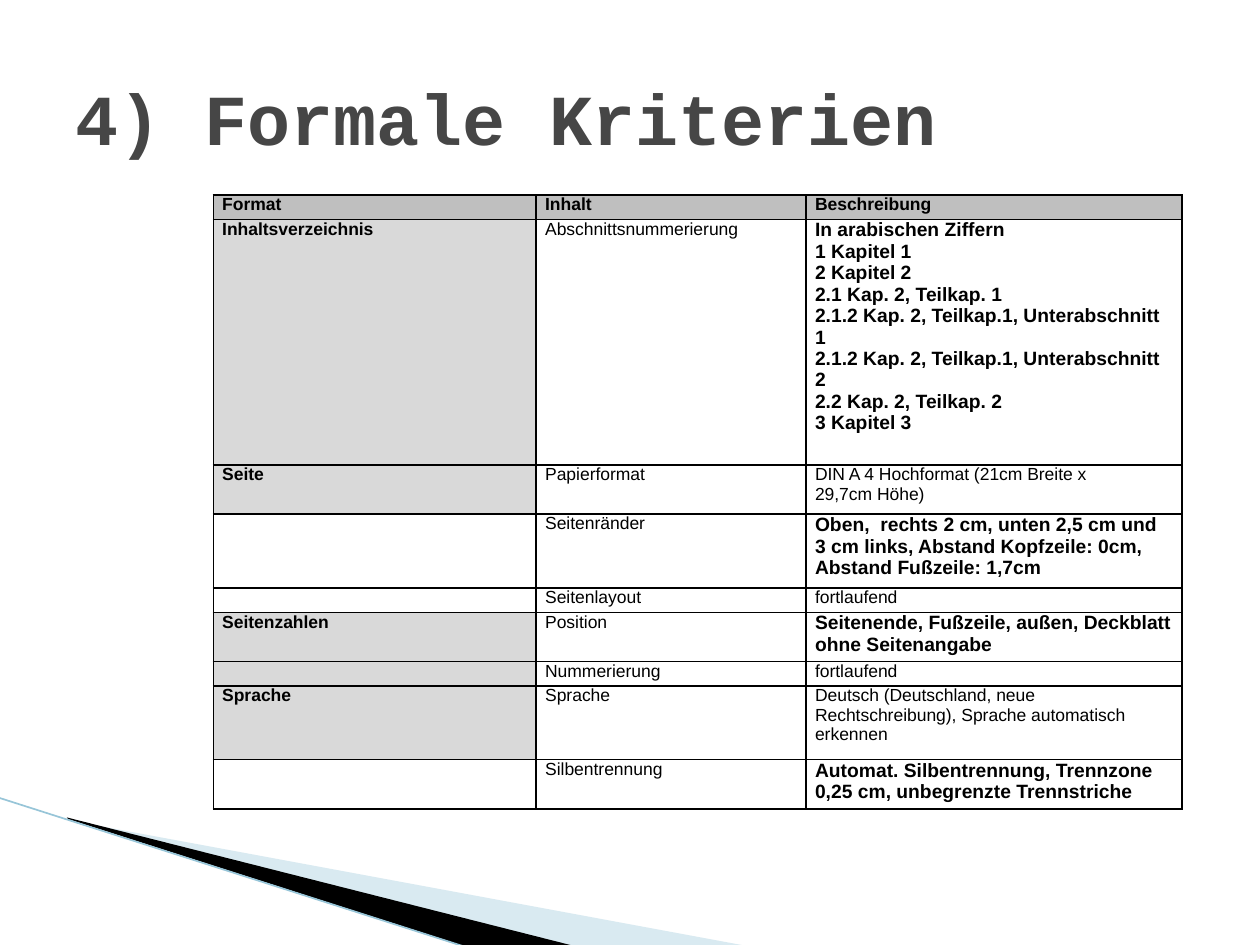
from dataclasses import dataclass

from lxml import etree
from pptx import Presentation
from pptx.dml.color import RGBColor
from pptx.enum.shapes import MSO_CONNECTOR
from pptx.enum.text import MSO_ANCHOR, MSO_AUTO_SIZE, PP_ALIGN
from pptx.oxml.ns import qn
from pptx.util import Cm, Pt

STRAIGHT = MSO_CONNECTOR.STRAIGHT
LEFT = PP_ALIGN.LEFT
MIDDLE = MSO_ANCHOR.MIDDLE
NO_AUTOFIT = MSO_AUTO_SIZE.NONE

COLORS = {
    "title": "464646",
    "text": "000000",
    "border": "000000",
    "header": "BFBFBF",
    "section": "D9D9D9",
    "pale_wedge": "A0CBDC",
    "dark_wedge": "000000",
    "edge": "97C5D8",
}
CELL_MARGINS = {
    "margin_left": Cm(0.18),
    "margin_right": Cm(0.18),
    "margin_top": Cm(0),
    "margin_bottom": Cm(0),
}
TITLE_FONT = {"name": "Courier New", "size": Pt(41), "bold": True}
PLAIN = {"name": "Arial", "size": Pt(10), "bold": False}
HEADING = PLAIN | {"bold": True}
EMPHASIS = HEADING | {"size": Pt(11)}

LINE_HEIGHT = 0.495  # cm; row heights are multiples of this
COLUMN_WIDTHS = (6.51, 5.44, 7.58)


@dataclass
class Wedge:
    points: list[tuple[float, float]]
    color: str
    opacity: int = 100


@dataclass
class Criterion:
    section: str
    content: str
    description: list[str]
    lines: int
    emphasized: bool = False
    shaded: bool = False


WEDGES = [
    Wedge([(1.4, 16.54), (15.11, 19.08), (11.58, 19.08), (1.4, 16.51)], "pale_wedge", 40),
    Wedge([(1.35, 16.48), (11.61, 19.08), (9.45, 19.1), (1.37, 16.51)], "dark_wedge"),
]
HEADERS = ("Format", "Inhalt", "Beschreibung")
CRITERIA = [
    Criterion("Inhaltsverzeichnis", "Abschnittsnummerierung", [
        "In arabischen Ziffern",
        "1 Kapitel 1",
        "2 Kapitel 2",
        "2.1 Kap. 2, Teilkap. 1",
        "2.1.2 Kap. 2, Teilkap.1, Unterabschnitt 1",
        "2.1.2 Kap. 2, Teilkap.1, Unterabschnitt 2",
        "2.2 Kap. 2, Teilkap. 2",
        "3 Kapitel 3",
    ], 10, emphasized=True, shaded=True),
    Criterion("Seite", "Papierformat",
              ["DIN A 4 Hochformat (21cm Breite x", "29,7cm Höhe)"], 2, shaded=True),
    Criterion("", "Seitenränder",
              ["Oben,  rechts 2 cm, unten 2,5 cm und 3 cm links, "
               "Abstand Kopfzeile: 0cm, Abstand Fußzeile: 1,7cm"], 3, emphasized=True),
    Criterion("", "Seitenlayout", ["fortlaufend"], 1),
    Criterion("Seitenzahlen", "Position",
              ["Seitenende, Fußzeile, außen, Deckblatt ohne Seitenangabe"], 2,
              emphasized=True, shaded=True),
    Criterion("", "Nummerierung", ["fortlaufend"], 1, shaded=True),
    Criterion("Sprache", "Sprache",
              ["Deutsch (Deutschland, neue",
               "Rechtschreibung), Sprache automatisch erkennen"], 3, shaded=True),
    Criterion("", "Silbentrennung",
              ["Automat. Silbentrennung, Trennzone",
               "0,25 cm, unbegrenzte Trennstriche"], 2, emphasized=True),
]


def rgb(name: str) -> RGBColor:
    return RGBColor.from_string(COLORS[name])


def apply(target, values: dict) -> None:
    for attribute, value in values.items():
        setattr(target, attribute, value)


def draw_wedge(slide, wedge: Wedge) -> None:
    corners = [(Cm(x), Cm(y)) for x, y in wedge.points]
    builder = slide.shapes.build_freeform(*corners[0])
    builder.add_line_segments(corners[1:], close=True)
    shape = builder.convert_to_shape()
    shape.shadow.inherit = False
    shape.line.fill.background()
    shape.fill.solid()
    shape.fill.fore_color.rgb = rgb(wedge.color)
    if wedge.opacity < 100:
        color = shape.fill._xPr.find(f".//{qn('a:srgbClr')}")
        etree.SubElement(color, qn("a:alpha"), val=str(wedge.opacity * 1000))


def draw_edge(slide) -> None:
    edge = slide.shapes.add_connector(STRAIGHT, Cm(-0.03), Cm(16.08), Cm(9.42), Cm(19.1))
    edge.line.color.rgb = rgb("edge")
    edge.line.width = Pt(0.95)
    etree.SubElement(edge._element.spPr, qn("a:effectLst"))


def add_borders(cell) -> None:
    properties = cell._tc.get_or_add_tcPr()
    for side in ("lnL", "lnR", "lnT", "lnB"):
        line = etree.SubElement(properties, qn(f"a:{side}"), w=str(Pt(1)))
        fill = etree.SubElement(line, qn("a:solidFill"))
        etree.SubElement(fill, qn("a:srgbClr"), val=COLORS["border"])


def fill_cell(cell, texts: list[str], font: dict, fill: str | None = None) -> None:
    apply(cell, CELL_MARGINS)
    add_borders(cell)
    if fill:
        cell.fill.solid()
        cell.fill.fore_color.rgb = rgb(fill)
    else:
        cell.fill.background()
    for index, text in enumerate(texts):
        frame = cell.text_frame
        paragraph = frame.add_paragraph() if index else frame.paragraphs[0]
        if text:
            run = paragraph.add_run()
            run.text = text
            apply(run.font, font)
            run.font.color.rgb = rgb("text")
        else:  # keeps an empty cell from stretching its row
            etree.SubElement(paragraph._p, qn("a:endParaRPr"), sz="1000")


def draw_table(slide) -> None:
    heights = [LINE_HEIGHT * lines for lines in (1, *(c.lines for c in CRITERIA))]
    table = slide.shapes.add_table(
        len(heights), len(HEADERS), Cm(4.3), Cm(3.93),
        Cm(sum(COLUMN_WIDTHS)), Cm(sum(heights))).table
    apply(table, {"first_row": False, "horz_banding": False})
    for column, width in zip(table.columns, COLUMN_WIDTHS):
        column.width = Cm(width)
    for row, height in zip(table.rows, heights):
        row.height = Cm(height)

    for column, header in enumerate(HEADERS):
        fill_cell(table.cell(0, column), [header], HEADING, "header")
    for row, criterion in enumerate(CRITERIA, start=1):
        section_fill = "section" if criterion.shaded else None
        description_font = EMPHASIS if criterion.emphasized else PLAIN
        fill_cell(table.cell(row, 0), [criterion.section], HEADING, section_fill)
        fill_cell(table.cell(row, 1), [criterion.content], PLAIN)
        fill_cell(table.cell(row, 2), criterion.description, description_font)


def set_title(slide) -> None:
    title = slide.shapes.title
    apply(title, {"left": Cm(1.27), "top": Cm(0.76), "width": Cm(22.86), "height": Cm(3.18)})
    apply(title.text_frame, {"vertical_anchor": MIDDLE, "word_wrap": True,
                             "auto_size": NO_AUTOFIT})
    paragraph = title.text_frame.paragraphs[0]
    paragraph.alignment = LEFT
    run = paragraph.add_run()
    run.text = "4) Formale Kriterien"
    apply(run.font, TITLE_FONT)
    run.font.color.rgb = rgb("title")


def main() -> None:
    presentation = Presentation()
    apply(presentation, {"slide_width": Cm(25.4), "slide_height": Cm(19.05)})
    slide = presentation.slides.add_slide(presentation.slide_layouts[5])

    # Corner decoration
    for wedge in WEDGES:
        draw_wedge(slide, wedge)
    draw_edge(slide)

    # Content
    draw_table(slide)
    set_title(slide)
    presentation.save("out.pptx")


if __name__ == "__main__":
    main()
